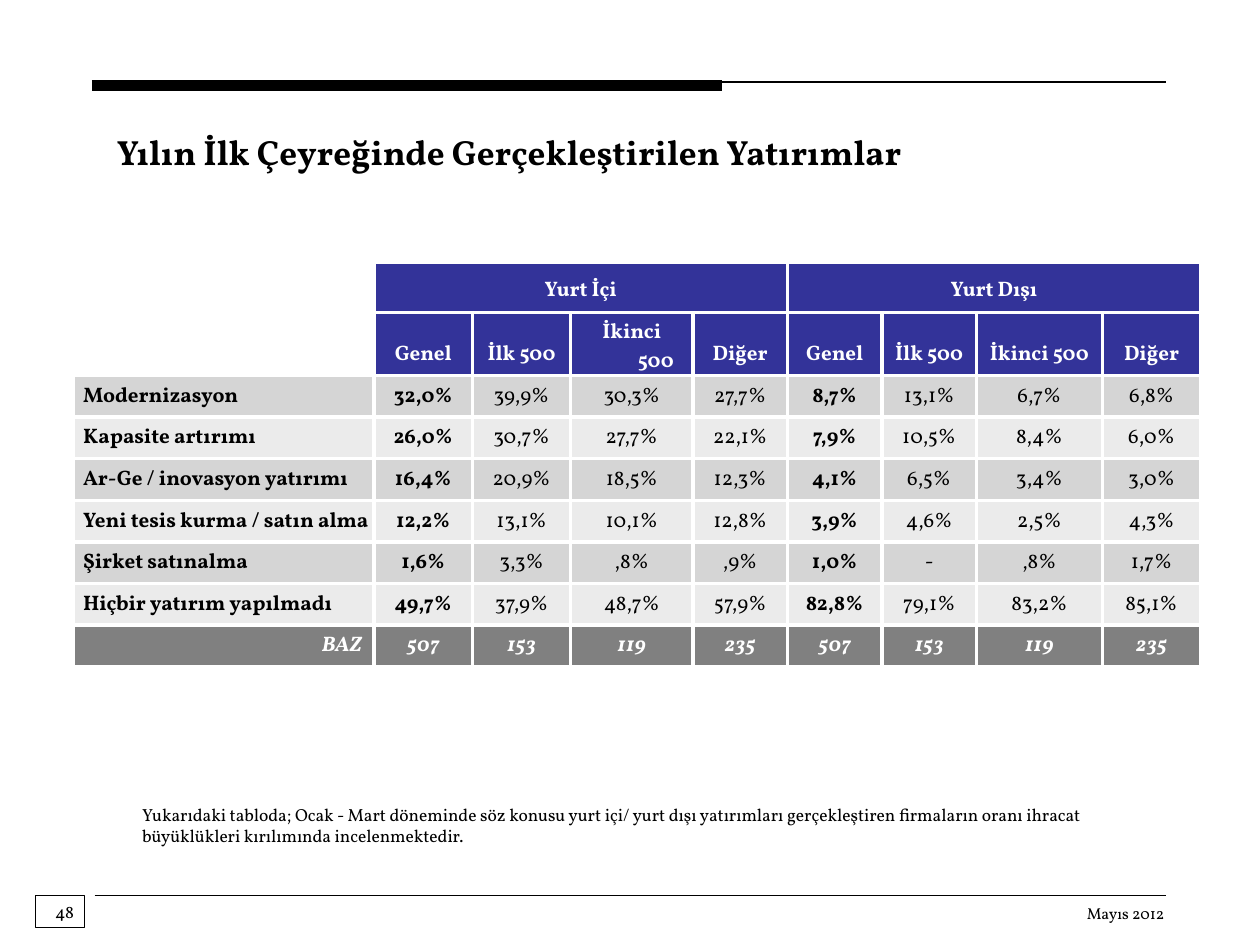
import pptx
import pptx.dml.color
import pptx.enum.shapes
import pptx.enum.text
import pptx.oxml
import pptx.oxml.ns
import pptx.util
from dataclasses import dataclass
from lxml import etree

Inches = pptx.util.Inches
Align = pptx.enum.text.PP_ALIGN
Anchor = pptx.enum.text.MSO_ANCHOR


@dataclass(frozen=True)
class Theme:
    font: str = "Vollkorn"
    ink: str = "000000"
    paper: str = "FFFFFF"
    header: str = "333399"
    bands: tuple = ("D5D5D5", "EBEBEB")
    base: str = "808080"
    title_size: float = 20
    table_size: float = 12
    note_size: float = 10
    date_size: float = 9
    thin: float = 0.75
    thick: float = 6
    border: float = 2.25


THEME = Theme()

COLUMN_WIDTHS = [2.39, 0.78, 0.78, 0.97, 0.75, 0.75, 0.75, 1, 0.78]
ROW_HEIGHTS = [0.34] * 2 + [0.33] * 7
REGIONS = ["Yurt İçi", "Yurt Dışı"]
GROUPS = ["Genel", "İlk 500", "İkinci 500", "Diğer"]
INVESTMENTS = [
    ["Modernizasyon", "32,0%", "39,9%", "30,3%", "27,7%", "8,7%", "13,1%", "6,7%", "6,8%"],
    ["Kapasite artırımı", "26,0%", "30,7%", "27,7%", "22,1%", "7,9%", "10,5%", "8,4%", "6,0%"],
    ["Ar-Ge / inovasyon yatırımı", "16,4%", "20,9%", "18,5%", "12,3%", "4,1%", "6,5%", "3,4%", "3,0%"],
    ["Yeni tesis kurma / satın alma", "12,2%", "13,1%", "10,1%", "12,8%", "3,9%", "4,6%", "2,5%", "4,3%"],
    ["Şirket satınalma", "1,6%", "3,3%", ",8%", ",9%", "1,0%", "-", ",8%", "1,7%"],
    ["Hiçbir yatırım yapılmadı", "49,7%", "37,9%", "48,7%", "57,9%", "82,8%", "79,1%", "83,2%", "85,1%"],
]
BASE_ROW = ["BAZ"] + ["507", "153", "119", "235"] * len(REGIONS)
BOLD_COLUMNS = (0, 1, 5)  # row labels and the two "Genel" columns


def rgb(value):
    return pptx.dml.color.RGBColor.from_string(value)


def write(frame, text, size, color=THEME.ink, bold=False, italic=False,
          align=Align.LEFT, hanging=0):
    paragraph = frame.paragraphs[0]
    paragraph.alignment = align
    if hanging:
        properties = paragraph._p.get_or_add_pPr()
        properties.set("marL", str(Inches(hanging)))
        properties.set("indent", str(-Inches(hanging)))
    run = paragraph.add_run()
    run.text = text
    run.font.name = THEME.font
    run.font.size = pptx.util.Pt(size)
    run.font.bold = bold
    run.font.italic = italic
    run.font.color.rgb = rgb(color)


def add_text(slide, box, text, size, wrap=True, **style):
    frame = slide.shapes.add_textbox(*map(Inches, box)).text_frame
    frame.word_wrap = wrap
    write(frame, text, size, **style)


def add_rule(slide, left, right, y, weight):
    rule = slide.shapes.add_connector(
        pptx.enum.shapes.MSO_CONNECTOR.STRAIGHT,
        Inches(left), Inches(y), Inches(right), Inches(y))
    rule.line.color.rgb = rgb(THEME.ink)
    rule.line.width = pptx.util.Pt(weight)
    etree.SubElement(rule._element.spPr, pptx.oxml.ns.qn("a:effectLst"))


def add_frame(slide, box):
    frame = slide.shapes.add_shape(
        pptx.enum.shapes.MSO_SHAPE.RECTANGLE, *map(Inches, box))
    frame.shadow.inherit = False
    frame.fill.background()
    frame.line.color.rgb = rgb(THEME.ink)
    frame.line.width = pptx.util.Pt(THEME.thin)


def add_borders(cell):
    properties = cell._tc.get_or_add_tcPr()
    for side in ("lnL", "lnR", "lnT", "lnB"):
        properties.append(pptx.oxml.parse_xml(
            f'<a:{side} {pptx.oxml.ns.nsdecls("a")} w="{pptx.util.Pt(THEME.border)}">'
            f'<a:solidFill><a:srgbClr val="{THEME.paper}"/></a:solidFill></a:{side}>'))


def fill_cell(cell, text, fill, insets, anchor, **style):
    cell.margin_left, cell.margin_top, cell.margin_right, cell.margin_bottom = map(Inches, insets)
    cell.vertical_anchor = anchor
    cell.fill.solid()
    cell.fill.fore_color.rgb = rgb(fill)
    write(cell.text_frame, text, THEME.table_size, **style)


def fill_heading(cell, text, fill=THEME.header, align=Align.CENTER, italic=False):
    fill_cell(cell, text, fill, (0.1, 0.05, 0.1, 0.05), Anchor.BOTTOM,
              color=THEME.paper, bold=True, italic=italic, align=align, hanging=0.38)


def add_investment_table(slide):
    table = slide.shapes.add_table(
        len(ROW_HEIGHTS), len(COLUMN_WIDTHS), Inches(0.58), Inches(2.08),
        Inches(sum(COLUMN_WIDTHS)), Inches(sum(ROW_HEIGHTS))).table
    table.first_row = table.horz_banding = False
    for column, width in zip(table.columns, COLUMN_WIDTHS):
        column.width = Inches(width)
    for row, height in zip(table.rows, ROW_HEIGHTS):
        row.height = Inches(height)
    for cell in table.iter_cells():
        add_borders(cell)
        cell.fill.background()

    # Two header rows: region over company group
    for region_index, region in enumerate(REGIONS):
        first = 1 + region_index * len(GROUPS)
        table.cell(0, first).merge(table.cell(0, first + len(GROUPS) - 1))
        fill_heading(table.cell(0, first), region)
        for offset, group in enumerate(GROUPS):
            fill_heading(table.cell(1, first + offset), group)

    # Banded investment rows
    for index, investment in enumerate(INVESTMENTS):
        for column, text in enumerate(investment):
            is_label = column == 0
            fill_cell(table.cell(index + 2, column), text, THEME.bands[index % 2],
                      (0.08 if is_label else 0.01, 0.01, 0.01, 0), Anchor.MIDDLE,
                      bold=column in BOLD_COLUMNS,
                      align=Align.LEFT if is_label else Align.CENTER)

    # Number of firms
    for column, text in enumerate(BASE_ROW):
        fill_heading(table.cell(len(ROW_HEIGHTS) - 1, column), text, THEME.base,
                     Align.CENTER if column else Align.RIGHT, italic=True)


def main():
    deck = pptx.Presentation()
    deck.slide_width, deck.slide_height = Inches(10), Inches(7.5)
    slide = deck.slides.add_slide(deck.slide_layouts[6])

    # Footer and top rules
    add_rule(slide, 0.75, 9.25, 7.11, THEME.thin)
    add_text(slide, (8.51, 7.12, 0.83, 0.25), "Mayıs 2012", THEME.date_size,
             wrap=False, align=Align.RIGHT)
    add_frame(slide, (0.28, 7.11, 0.39, 0.25))
    add_rule(slide, 0.73, 5.73, 0.68, THEME.thick)
    add_rule(slide, 0.75, 9.25, 0.65, THEME.thin)
    add_text(slide, (0.34, 7.1, 2.5, 0.4), "48", THEME.note_size)

    # Content
    add_investment_table(slide)
    add_text(slide, (1.03, 6.33, 7.64, 0.6),
             "Yukarıdaki tabloda; Ocak - Mart döneminde söz konusu yurt içi/ yurt dışı "
             "yatırımları gerçekleştiren firmaların oranı ihracat büyüklükleri "
             "kırılımında incelenmektedir.", THEME.note_size, align=Align.JUSTIFY)
    add_text(slide, (0.83, 0.99, 8.45, 0.44),
             "Yılın İlk Çeyreğinde Gerçekleştirilen Yatırımlar",
             THEME.title_size, bold=True)

    deck.save("out.pptx")


if __name__ == "__main__":
    main()
